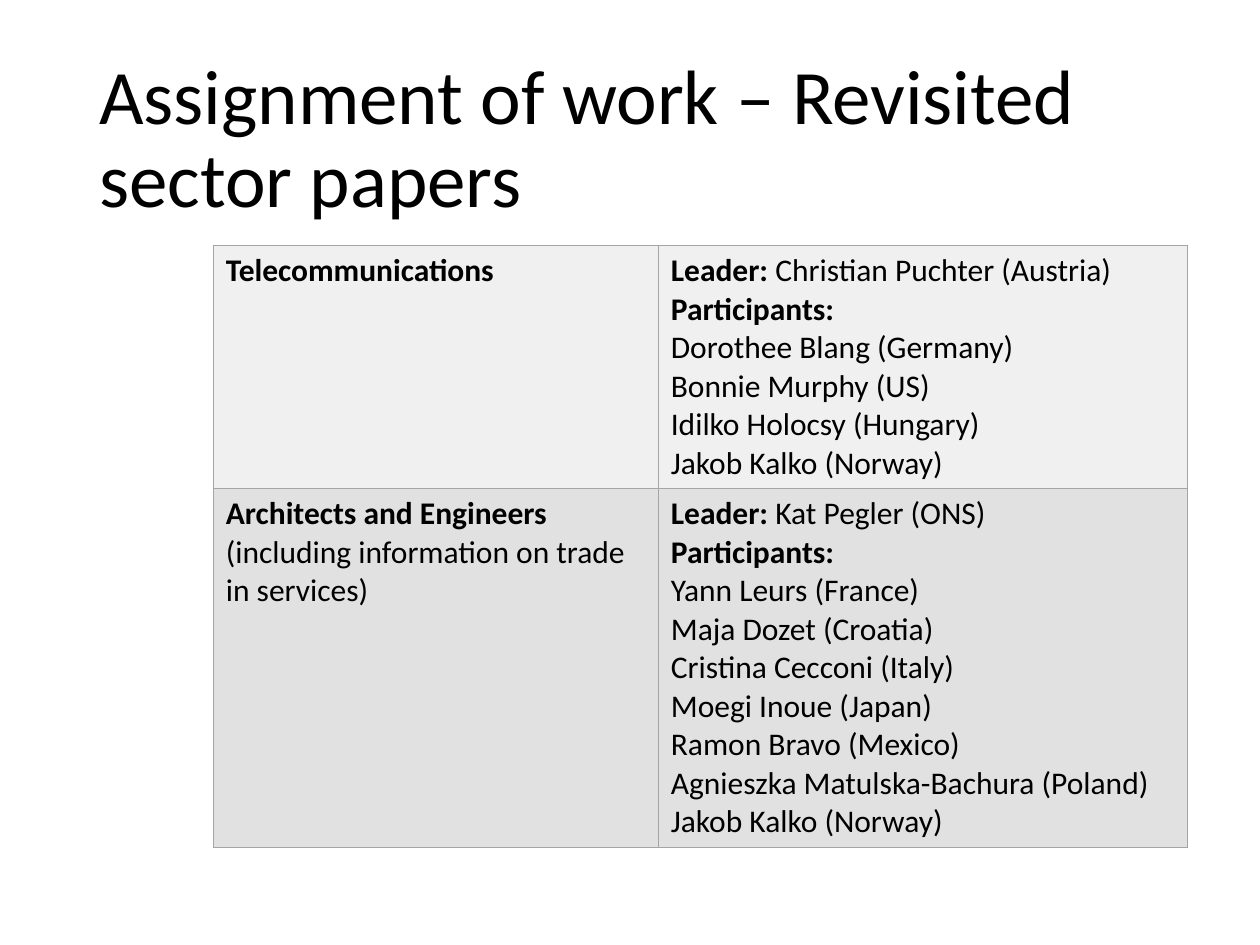
from lxml.etree import SubElement
from pptx import Presentation
from pptx.dml.color import RGBColor
from pptx.enum.text import MSO_ANCHOR
from pptx.oxml.ns import qn
from pptx.util import Cm, Pt

FONT = "Calibri"
HUES = {"text": "000000", "edge": "A5A5A5", "light": "F0F0F0", "dark": "E1E1E1"}
COLS = (8.97, 10.67)

# Each sector: fill, row height in cm, name, remark, leader, participants
SECTORS = [
    ("light", 4.9, "Telecommunications", "", "Christian Puchter (Austria)",
     ["Dorothee Blang (Germany)", "Bonnie Murphy (US)",
      "Idilko Holocsy (Hungary)", "Jakob Kalko (Norway)"]),
    ("dark", 7.23, "Architects and Engineers",
     "(including information on trade in services)", "Kat Pegler (ONS)",
     ["Yann Leurs (France)", "Maja Dozet (Croatia)", "Cristina Cecconi (Italy)",
      "Moegi Inoue (Japan)", "Ramon Bravo (Mexico)",
      "Agnieszka Matulska-Bachura (Poland)", "Jakob Kalko (Norway)"]),
]


def color(name):
    return RGBColor.from_string(HUES[name])


def style(para, size):
    para.font.name = FONT
    para.font.size = Pt(size)
    para.font.color.rgb = color("text")


def add_title(slide, text):
    box = slide.shapes.add_textbox(Cm(1.75), Cm(1.01), Cm(21.9), Cm(3.68))
    frame = box.text_frame
    frame.word_wrap = True
    frame.vertical_anchor = MSO_ANCHOR.MIDDLE
    para = frame.paragraphs[0]
    para.text = text
    para.line_spacing = 0.9
    style(para, 44)


def add_edges(cell):
    """Draw a thin line on all four sides; lines must precede the fill."""
    props = cell._tc.get_or_add_tcPr()
    for side in ("lnL", "lnR", "lnT", "lnB"):
        line = SubElement(props, qn(f"a:{side}"), w=str(Pt(1)))
        fill = SubElement(line, qn("a:solidFill"))
        SubElement(fill, qn("a:srgbClr"), val=HUES["edge"])


def fill_cell(cell, lines, hue):
    """Write one paragraph per (bold part, plain part) pair."""
    add_edges(cell)
    cell.fill.solid()
    cell.fill.fore_color.rgb = color(hue)
    frame = cell.text_frame
    for i, parts in enumerate(lines):
        para = frame.add_paragraph() if i else frame.paragraphs[0]
        style(para, 18)
        for text, bold in zip(parts, (True, False)):
            if text:
                run = para.add_run()
                run.text = text
                run.font.bold = bold


def add_sectors(slide):
    high = sum(sector[1] for sector in SECTORS)
    table = slide.shapes.add_table(
        len(SECTORS), len(COLS), Cm(4.3), Cm(4.95), Cm(sum(COLS)), Cm(high)).table
    table.first_row = False
    table.horz_banding = False
    for col, width in zip(table.columns, COLS):
        col.width = Cm(width)
    for i, (hue, height, name, note, leader, people) in enumerate(SECTORS):
        table.rows[i].height = Cm(height)
        topic = [(name, "")] + ([("", note)] if note else [])
        team = [("Leader: ", leader), ("Participants:", "")]
        team += [("", person) for person in people]
        fill_cell(table.cell(i, 0), topic, hue)
        fill_cell(table.cell(i, 1), team, hue)


def main():
    deck = Presentation()
    deck.slide_width, deck.slide_height = Cm(25.4), Cm(19.05)
    slide = deck.slides.add_slide(deck.slide_layouts[6])
    add_title(slide, "Assignment of work – Revisited sector papers")
    add_sectors(slide)
    deck.save("out.pptx")


if __name__ == "__main__":
    main()
